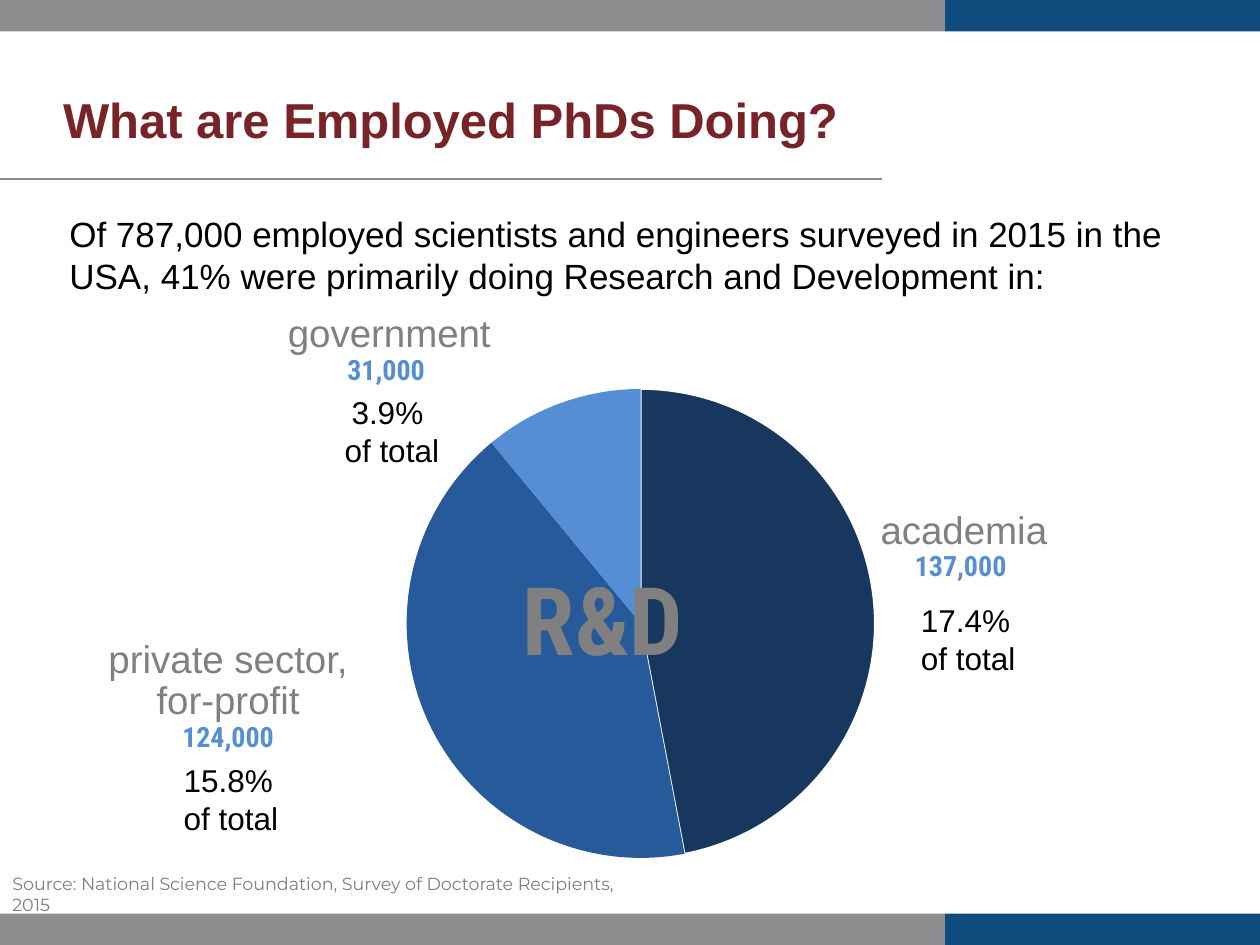
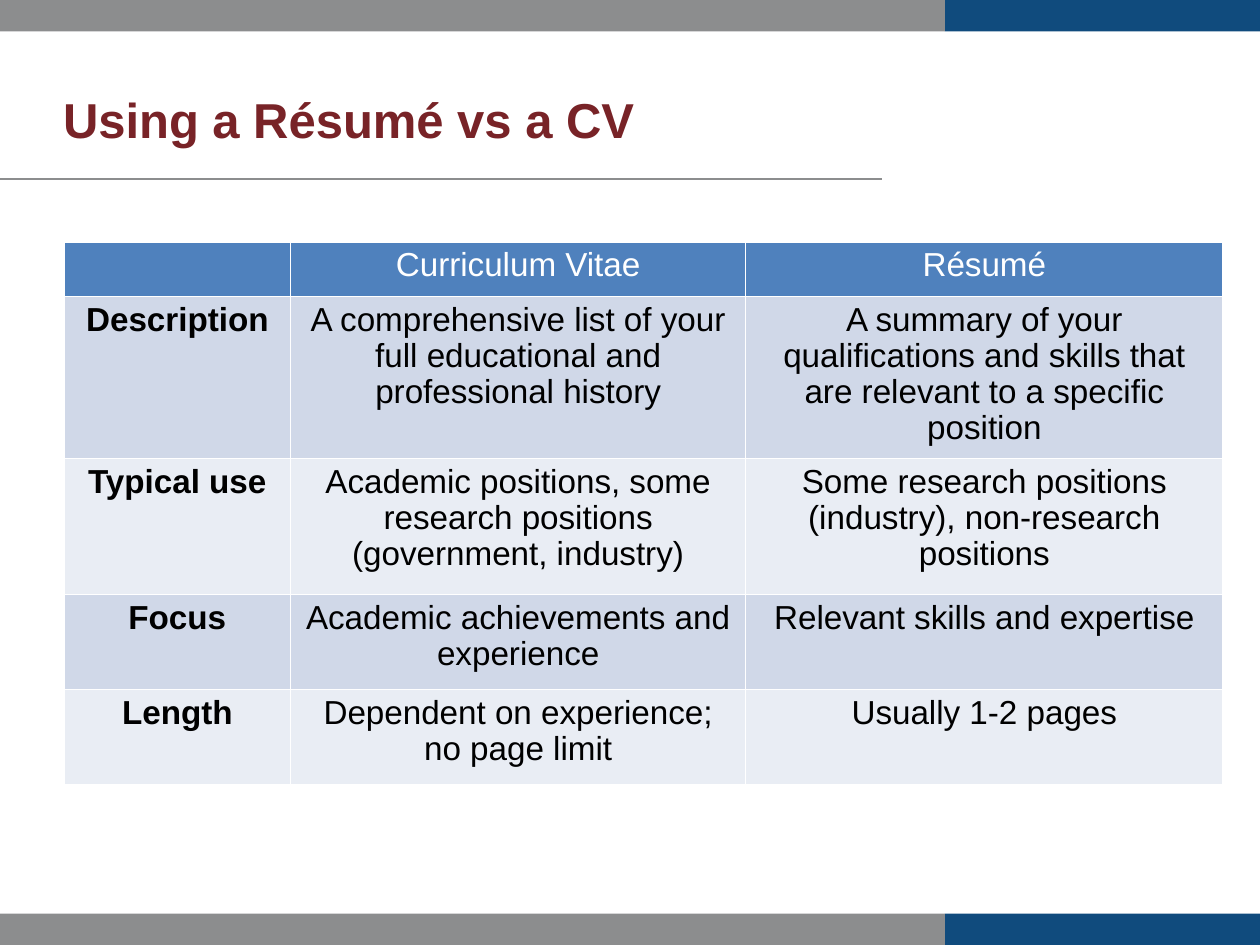
from dataclasses import dataclass

from lxml.etree import SubElement
from pptx import Presentation
from pptx.chart.data import CategoryChartData
from pptx.dml.color import RGBColor as RGB
from pptx.enum.chart import XL_CHART_TYPE as CHART
from pptx.enum.shapes import MSO_CONNECTOR as CONN, MSO_SHAPE as SHAPE
from pptx.enum.text import MSO_ANCHOR as ANCHOR, MSO_AUTO_SIZE as AUTO, PP_ALIGN as ALIGN
from pptx.oxml import parse_xml
from pptx.oxml.ns import nsdecls, qn
from pptx.util import Inches, Pt

UNIT = 0.25
COLS, ROWS = 40, 30


@dataclass(frozen=True)
class Theme:
    """Colours and text styles shared by the slides."""
    grey = "8C8D8E"
    navy = "104B7D"
    white = "FFFFFF"
    header = "4F81BD"
    bands = ("E9EDF4", "D0D8E8")
    slices = ("17375E", "265A9A", "558ED5")
    title = dict(name="Arial", size=28, bold=True, color="782327")
    intro = dict(name="Arial", size=20, color="000000")
    source = dict(name="Montserrat", size=10, color="7F7F7F")
    hub = dict(name="Roboto Condensed", size=54, bold=True, color="808080")
    sector = dict(name="Arial", size=22, color="808080")
    count = dict(name="Roboto Condensed", size=16, bold=True, color="558ED5")
    share = dict(name="Arial", size=18, color="000000")
    chart = dict(name="Calibri", size=10, color="000000")
    cell = dict(name="Arial", size=19, bold=False, color="000000")
    row_head = dict(cell, bold=True)
    col_head = dict(cell, color=white)


@dataclass(frozen=True)
class Box:
    """A region of the slide, in grid columns and rows."""
    x: float
    y: float
    w: float
    h: float

    def inset(self, x, y, w, h):
        """Return a box offset from this one's top left corner."""
        return Box(self.x + x, self.y + y, w, h)

    def emu(self):
        """Return left, top, width and height as lengths."""
        return [Inches(v * UNIT) for v in (self.x, self.y, self.w, self.h)]


T = Theme()
PAGE = Box(0, 0, COLS, ROWS)


def style_font(font, style):
    """Apply a text style to a font."""
    for key, value in style.items():
        if key == "color":
            font.color.rgb = RGB.from_string(value)
        else:
            setattr(font, key, Pt(value) if key == "size" else value)


def write(tf, lines, margins=None, para=None, **frame):
    """Fill a text frame with (text, style) paragraphs."""
    frame = dict(word_wrap=True, auto_size=AUTO.NONE) | frame
    if margins is not None:
        sides = ("left", "top", "right", "bottom")
        frame |= {f"margin_{side}": Inches(margins) for side in sides}
    for key, value in frame.items():
        setattr(tf, key, value)
    for i, (text, style) in enumerate(lines):
        p = tf.add_paragraph() if i else tf.paragraphs[0]
        for key, value in (para or {}).items():
            setattr(p, key, value)
        r = p.add_run()
        r.text = text
        style_font(r.font, style)


def add_text(s, box, lines, **fmt):
    """Add a text box in the given box."""
    write(s.shapes.add_textbox(*box.emu()).text_frame, lines, **fmt)


def add_band(s, box):
    """Add a grey and navy band across the box."""
    split = box.w * 0.75
    for x, w, color in ((split, box.w - split, T.navy), (0, split, T.grey)):
        sp = s.shapes.add_shape(SHAPE.RECTANGLE, *box.inset(x, 0, w, box.h).emu())
        sp.shadow.inherit = False
        sp.fill.solid()
        sp.fill.fore_color.rgb = RGB.from_string(color)
        sp.line.fill.background()


def add_rule(s, box):
    """Add a thin rule along the top of the box."""
    x, y, w, _ = box.emu()
    line = s.shapes.add_connector(CONN.STRAIGHT, x, y, x + w, y)
    line.line.color.rgb = RGB.from_string(T.grey)
    line.line.width = Pt(0.75)
    SubElement(line._element.spPr, qn("a:effectLst"))


def new_slide(prs, title):
    """Add a slide with its rule, bands and title."""
    s = prs.slides.add_slide(prs.slide_layouts[5])
    add_rule(s, PAGE.inset(0, 5.68, 28, 0))
    for y in (0, ROWS - 1):
        add_band(s, PAGE.inset(0, y, COLS, 1))
    sp = s.shapes.title
    sp.left, sp.top, sp.width, sp.height = PAGE.inset(2, 2.76, 28.4, 2).emu()
    write(sp.text_frame, [(title, T.title)], margins=0,
          para=dict(alignment=ALIGN.LEFT), vertical_anchor=ANCHOR.MIDDLE)
    return s


def add_pie(s, box, values):
    """Add the pie chart with its caption over the middle."""
    data = CategoryChartData()
    data.categories = [str(i + 1) for i in range(len(values))]
    data.add_series("Series 1", values)
    chart = s.shapes.add_chart(CHART.PIE, *box.emu(), data).chart
    chart.has_title = chart.has_legend = False
    style_font(chart.font, T.chart)
    plot = chart.plots[0]
    plot.vary_by_categories = False
    for i, color in enumerate(T.slices):
        fmt = plot.series[0].points[i].format
        fmt.fill.solid()
        fmt.fill.fore_color.rgb = RGB.from_string(color)
        if i:
            fmt.line.fill.background()
        else:
            fmt.line.color.rgb = RGB.from_string(T.white)
            fmt.line.width = Pt(1)
    area = chart._chartSpace.chart.plotArea
    for old in area.findall(qn("c:layout")):
        area.remove(old)
    rules = (("layoutTarget", "inner"), ("xMode", "edge"), ("yMode", "edge"),
             ("x", 0.01), ("y", 0.01), ("w", 0.99), ("h", 0.99))
    inner = "".join(f'<c:{tag} val="{val}"/>' for tag, val in rules)
    area.insert(0, parse_xml(
        f'<c:layout {nsdecls("c")}><c:manualLayout>{inner}</c:manualLayout></c:layout>'))
    add_text(s, box.inset(3.64, 5.4, 6.96, 4), [("R&D", T.hub)], margins=0.05)


def add_sector(s, box, name, count, share, shift, align):
    """Add a sector's name and count, with its share of the total below."""
    add_text(s, box, [(name, T.sector), (count, T.count)], margins=0.1,
             para=dict(alignment=ALIGN.CENTER, line_spacing=0.9),
             vertical_anchor=ANCHOR.MIDDLE)
    add_text(s, box.inset(*shift, 4.4, 2.84), [(t, T.share) for t in share],
             para=dict(alignment=align))


def set_borders(cell):
    """Draw thin white lines around a table cell."""
    tc_pr = cell._tc.get_or_add_tcPr()
    for side in "LRTB":
        ln = SubElement(tc_pr, qn(f"a:ln{side}"), w=str(Pt(1)))
        fill = SubElement(ln, qn("a:solidFill"))
        SubElement(fill, qn("a:srgbClr"), val=T.white)


def add_grid(s, box, rows, widths, heights):
    """Add a banded table with a header row and bold row heads."""
    table = s.shapes.add_table(len(rows), len(widths), *box.emu()).table
    for col, w in zip(table.columns, widths):
        col.width = Inches(w * UNIT)
    for i, (row, h) in enumerate(zip(rows, heights)):
        table.rows[i].height = Inches(h * UNIT)
        for j, text in enumerate(row):
            cell = table.cell(i, j)
            cell.margin_left = cell.margin_right = Inches(0.11)
            set_borders(cell)
            cell.fill.solid()
            color = T.bands[i % 2] if i else T.header
            cell.fill.fore_color.rgb = RGB.from_string(color)
            style = T.col_head if i == 0 else T.cell if j else T.row_head
            if text:
                p = cell.text_frame.paragraphs[0]
                p.alignment, p.line_spacing = ALIGN.CENTER, 0.97
                r = p.add_run()
                r.text = text
                style_font(r.font, style)


def phd_slide(prs):
    """Build the slide on where employed PhDs do research."""
    s = new_slide(prs, "What are Employed PhDs Doing?")
    add_text(s, PAGE.inset(2, 6.56, 35.28, 2.92), [(
        "Of 787,000 employed scientists and engineers surveyed in 2015 in the USA, "
        "41% were primarily doing Research and Development in:", T.intro)], margins=0.05)
    add_text(s, PAGE.inset(0, 27.32, 19.96, 1.48), [(
        "Source: National Science Foundation, Survey of Doctorate Recipients, 2015",
        T.source)], margins=0.1)
    add_pie(s, PAGE.inset(12.76, 12.2, 15.04, 15.04), (47, 42, 11))
    sectors = (
        ((7.2, 9.48, 10.32, 3.28), "government", "31,000 ",
         ("3.9% ", "of total"), (3.04, 2.8), ALIGN.CENTER),
        ((25.44, 15.72, 10.32, 3.28), "academia", "137,000 ",
         ("17.4% of total",), (3.4, 3.16), ALIGN.LEFT),
        ((2.08, 19.88, 10.32, 4.48), "private sector, for-profit", "124,000",
         ("15.8% of total",), (3.36, 4.08), ALIGN.LEFT),
    )
    for place, *content in sectors:
        add_sector(s, PAGE.inset(*place), *content)


def resume_slide(prs):
    """Build the slide comparing a CV with a résumé."""
    s = new_slide(prs, "Using a Résumé vs a CV")
    rows = (
        ("", "Curriculum Vitae", "Résumé"),
        ("Description",
         "A comprehensive list of your full educational and professional history",
         "A summary of your qualifications and skills that are relevant to a specific position"),
        ("Typical use",
         "Academic positions, some research positions (government, industry)",
         "Some research positions (industry), non-research positions"),
        ("Focus", "Academic achievements and experience", "Relevant skills and expertise"),
        ("Length", "Dependent on experience; no page limit", "Usually 1-2 pages"),
    )
    widths, heights = (7.2, 14.44, 15.16), (1.74, 5.14, 4.32, 3.02, 3.02)
    add_grid(s, PAGE.inset(2.03, 7.68, sum(widths), sum(heights)), rows, widths, heights)


def main():
    """Build and save the presentation."""
    prs = Presentation()
    prs.slide_width, prs.slide_height = PAGE.emu()[2:]
    phd_slide(prs)
    resume_slide(prs)
    prs.save("out.pptx")


if __name__ == "__main__":
    main()
